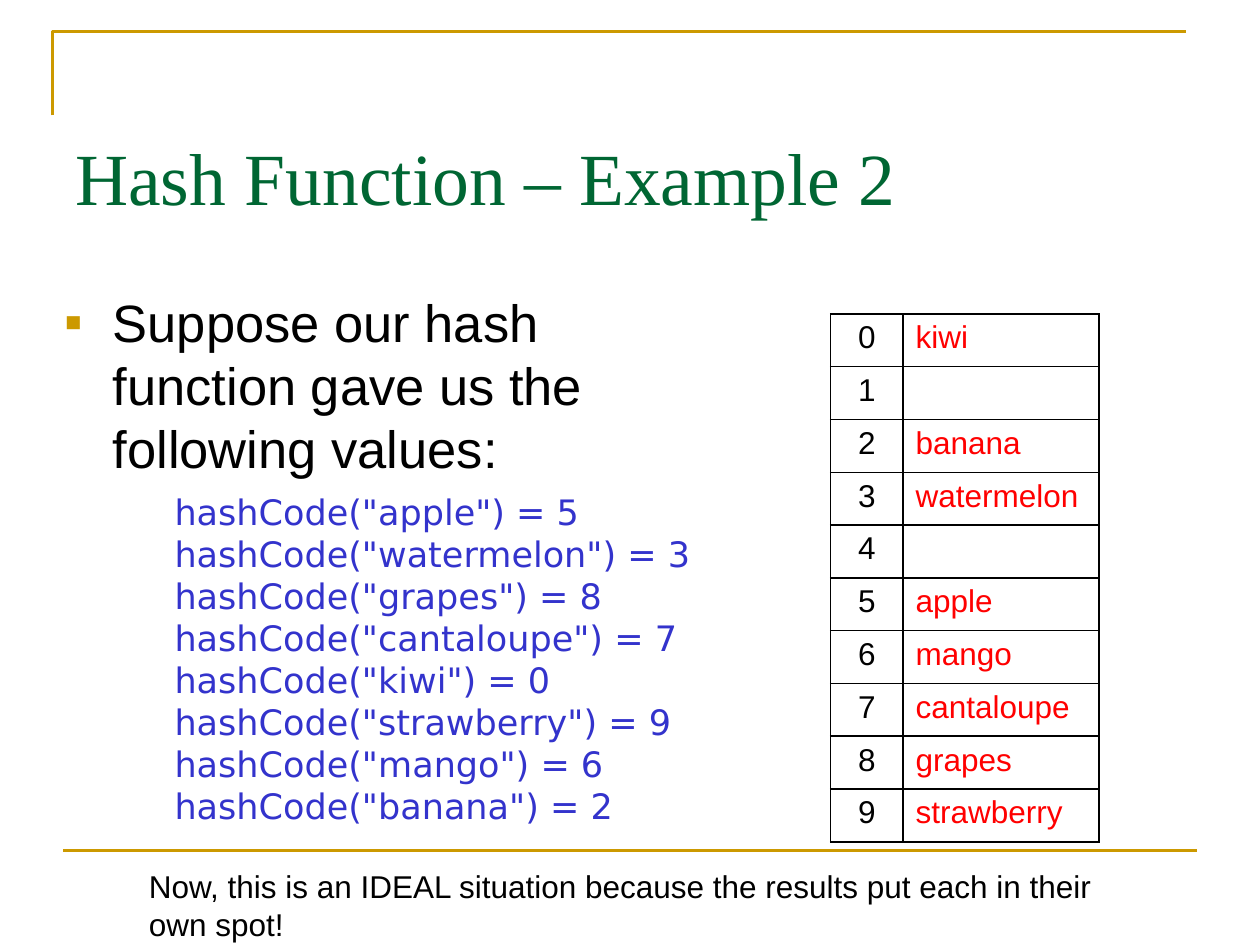
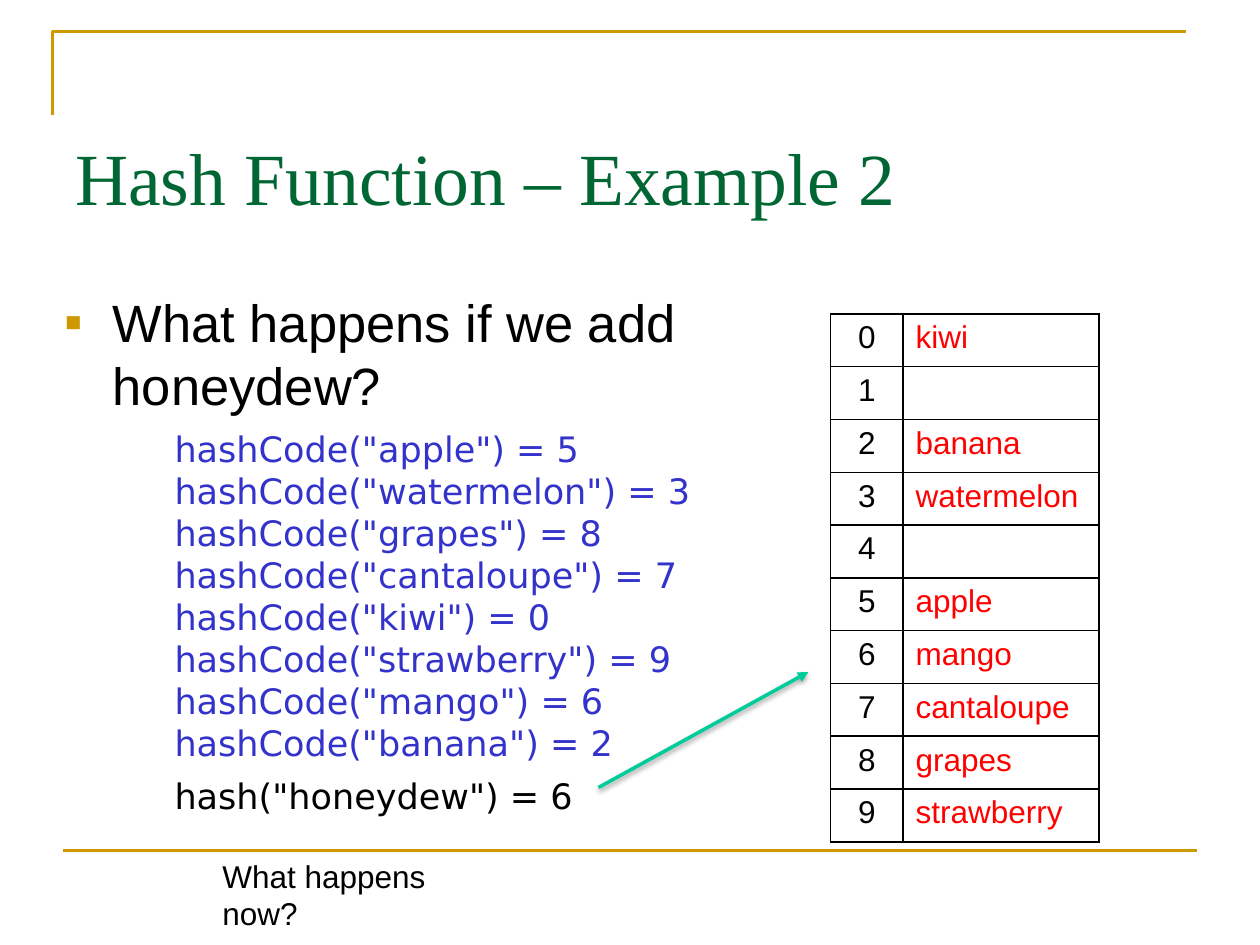
from dataclasses import dataclass

from lxml import etree
from pptx import Presentation
from pptx.dml.color import RGBColor
from pptx.enum.shapes import MSO_CONNECTOR
from pptx.enum.text import PP_ALIGN
from pptx.oxml import parse_xml
from pptx.oxml.ns import nsdecls, qn
from pptx.util import Inches, Pt

STRAIGHT = MSO_CONNECTOR.STRAIGHT
CENTER = PP_ALIGN.CENTER

# Grid: 120 columns by 90 rows of square units
COLS, ROWS = 120, 90
WIDTH, HEIGHT = Inches(10), Inches(7.5)
UNIT = WIDTH // COLS


@dataclass(frozen=True)
class Theme:
    gold: str = "CC9900"
    green: str = "006633"
    blue: str = "3333CC"
    red: str = "FF0000"
    black: str = "000000"
    mint: str = "00CC99"
    title_font: str = "Times New Roman"
    body_font: str = "Arial"
    code_font: str = "DejaVu Sans"
    title_size: float = 42
    body_size: float = 30
    code_size: float = 20
    small_size: float = 18
    rule_width: float = 1.5
    arrow_width: float = 2
    border_width: float = 1


T = Theme()
TITLE = "Hash Function – Example 2"
TITLE_BOX = (6, 12, 108, 15)
TABLE_BOX = (79.1, 29.9, 25.56, 50.3)
INDEX_SHARE = 0.27  # index column's share of the table width
HASHES = {"apple": 5, "watermelon": 3, "grapes": 8, "cantaloupe": 7,
          "kiwi": 0, "strawberry": 9, "mango": 6, "banana": 2}
SLOTS = 10


def grid(*units):
    return [round(u * UNIT) for u in units]


def style(p, font, size, color):
    p.font.name, p.font.size = font, Pt(size)
    p.font.color.rgb = RGBColor.from_string(color)


def set_line(line, color, width):
    line.color.rgb = RGBColor.from_string(color)
    line.width = Pt(width)


def add_text(s, box, text, font, size, color):
    tf = s.shapes.add_textbox(*grid(*box)).text_frame
    tf.word_wrap = True
    p = tf.paragraphs[0]
    p.text = text
    style(p, font, size, color)
    return tf


def add_line(s, ends, color, width):
    line = s.shapes.add_connector(STRAIGHT, *grid(*ends))
    set_line(line.line, color, width)
    sp_pr = line._element.spPr
    return line, etree.SubElement(sp_pr, qn("a:effectLst"))


def add_frame(s):
    # Corner rule at the top, straight rule at the bottom
    left, top, right, bottom = grid(5, 3, 113, 11)
    builder = s.shapes.build_freeform(left, bottom)
    builder.add_line_segments([(left, top), (right, top)], close=False)
    corner = builder.convert_to_shape()
    corner.shadow.inherit = False
    corner.fill.background()
    set_line(corner.line, T.gold, T.rule_width)
    add_line(s, (6, 81, 114, 81), T.gold, T.rule_width)


def indent(p, margin, first, space):
    p.space_before = Pt(space)
    p_pr = p._p.get_or_add_pPr()
    p_pr.set("marL", str(Inches(margin)))
    p_pr.set("indent", str(Inches(first)))
    return p_pr


def add_bullet(p):
    p_pr = indent(p, 0.38, -0.38, 7.5)
    marks = (f'<a:buClr {nsdecls("a")}><a:srgbClr val="{T.gold}"/></a:buClr>',
             f'<a:buFont {nsdecls("a")} typeface="{T.body_font}"/>',
             f'<a:buChar {nsdecls("a")} char="▪"/>')
    at = p_pr.index(p_pr.find(qn("a:defRPr")))
    for i, mark in enumerate(marks):
        p_pr.insert(at + i, parse_xml(mark))


def add_body(s, box, lead, extra_code):
    tf = add_text(s, box, lead, T.body_font, T.body_size, T.black)
    add_bullet(tf.paragraphs[0])
    code = "\n".join(f'hashCode("{k}") = {v}' for k, v in HASHES.items())
    for text, color in ((code, T.blue), (extra_code, T.black)):
        if text:
            p = tf.add_paragraph()
            p.text = text
            style(p, T.code_font, T.code_size, color)
            indent(p, 0.87, 0, 6.5)


def add_borders(cell):
    tc_pr = cell._tc.get_or_add_tcPr()
    for i, side in enumerate("LRTB"):
        tc_pr.insert(i, parse_xml(
            f'<a:ln{side} {nsdecls("a")} w="{Pt(T.border_width)}"><a:solidFill>'
            f'<a:srgbClr val="{T.black}"/></a:solidFill></a:ln{side}>'))


def add_hash_table(s, box):
    table = s.shapes.add_table(SLOTS, 2, *grid(*box)).table
    table.first_row = table.horz_banding = False
    for col, share in zip(table.columns, (INDEX_SHARE, 1 - INDEX_SHARE)):
        col.width = grid(box[2] * share)[0]
    keys = {slot: key for key, slot in HASHES.items()}
    for slot in range(SLOTS):
        values = ((str(slot), T.black), (keys.get(slot, ""), T.red))
        for c, (text, color) in enumerate(values):
            cell = table.cell(slot, c)
            cell.fill.background()
            add_borders(cell)
            p = cell.text_frame.paragraphs[0]
            p.text = text
            style(p, T.body_font, T.small_size, color)
        table.cell(slot, 0).text_frame.paragraphs[0].alignment = CENTER


def add_arrow(s, ends):
    arrow, effects = add_line(s, ends, T.mint, T.arrow_width)
    ln = arrow.line._get_or_add_ln()
    etree.SubElement(ln, qn("a:tailEnd"), type="triangle")
    effects.append(parse_xml(
        f'<a:outerShdw {nsdecls("a")} blurRad="{Pt(3.1)}" dist="{Pt(1.6)}" '
        f'dir="5400000" rotWithShape="0"><a:srgbClr val="{T.black}">'
        '<a:alpha val="38000"/></a:srgbClr></a:outerShdw>'))


def add_hash_slide(prs, lead, body_box, note, note_box,
                   extra_code=None, arrow=None):
    s = prs.slides.add_slide(prs.slide_layouts[6])
    add_frame(s)
    add_text(s, TITLE_BOX, TITLE, T.title_font, T.title_size, T.green)
    add_body(s, body_box, lead, extra_code)
    add_hash_table(s, TABLE_BOX)
    add_text(s, note_box, note, T.body_font, T.small_size, T.black)
    if arrow:
        add_arrow(s, arrow)


def main():
    prs = Presentation()
    prs.slide_width, prs.slide_height = WIDTH, HEIGHT
    add_hash_slide(
        prs, "Suppose our hash function gave us the following values:",
        (5, 27, 64, 61),
        "Now, this is an IDEAL situation because the results put each in "
        "their own spot!", (13, 82, 98, 4.8))
    add_hash_slide(
        prs, "What happens if we add honeydew?", (5, 27, 64, 53),
        "What happens now?", (20, 81, 27.8, 4.8),
        extra_code='hash("honeydew") = 6', arrow=(57, 75, 77, 64))
    prs.save("out.pptx")


if __name__ == "__main__":
    main()
